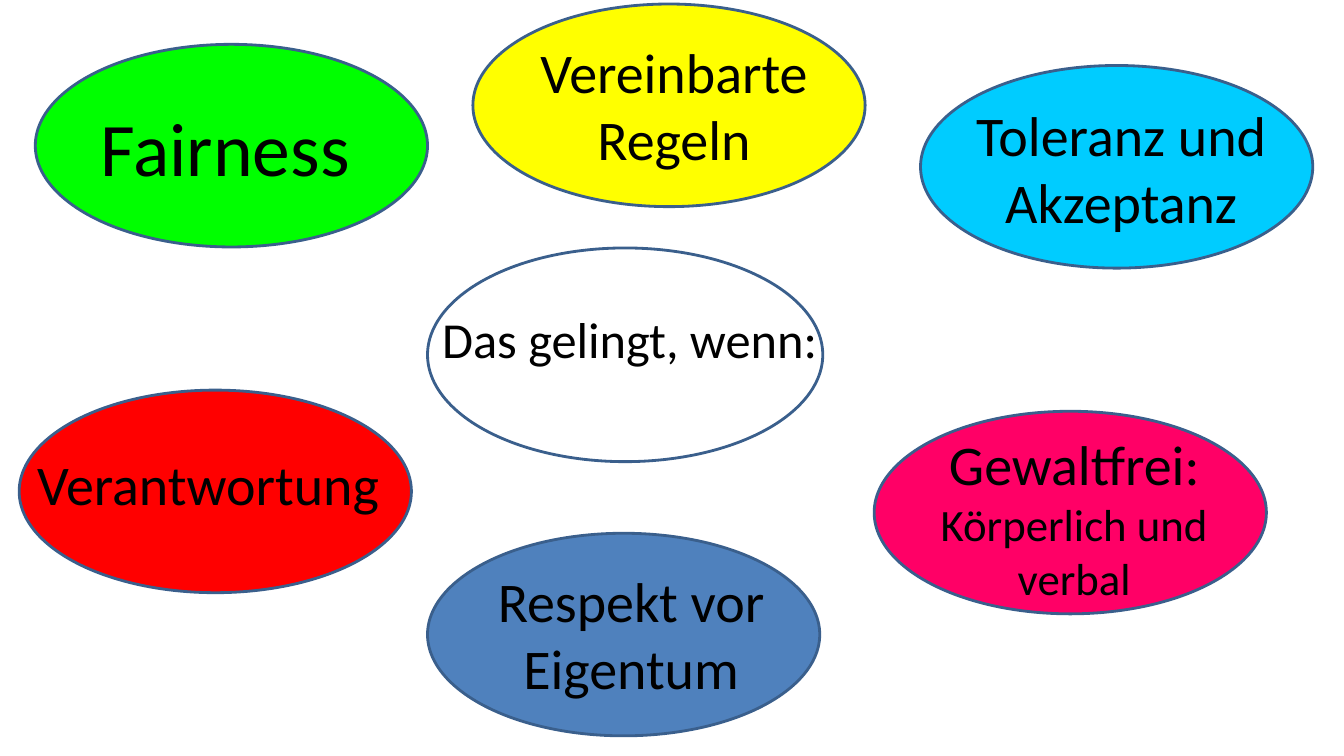
from pptx import Presentation
from pptx.dml.color import RGBColor
from pptx.enum.shapes import MSO_SHAPE
from pptx.enum.text import MSO_AUTO_SIZE, PP_ALIGN
from pptx.util import Inches, Pt

BLACK = RGBColor(0x00, 0x00, 0x00)
EDGE = RGBColor(0x3A, 0x5F, 0x8C)
GREEN = RGBColor(0x00, 0xFF, 0x00)
YELLOW = RGBColor(0xFF, 0xFF, 0x00)
CYAN = RGBColor(0x00, 0xCC, 0xFF)
PINK = RGBColor(0xFF, 0x00, 0x66)
BLUE = RGBColor(0x4F, 0x81, 0xBD)
RED = RGBColor(0xFF, 0x00, 0x00)

LEFT, CENTER = PP_ALIGN.LEFT, PP_ALIGN.CENTER
SIZE = (3.89, 2.01)

# Ellipse box, fill, label box relative to the ellipse, alignment, (text, size) lines
BUBBLES = [
    ((4.24, 2.46, 3.92, 2.12), None, (0, 0.55, 4.01, 0.71), CENTER,
     [("Das gelingt, wenn:", 36)]),
    ((0.35, 0.44, *SIZE), GREEN, (0.55, 0.51, 2.79, 1.01), LEFT,
     [("Fairness", 54)]),
    ((4.69, 0.04, *SIZE), YELLOW, (0.53, 0.28, 2.93, 1.45), CENTER,
     [("Vereinbarte Regeln", 40)]),
    ((9.13, 0.65, *SIZE), CYAN, (0.35, 0.3, 3.28, 1.45), CENTER,
     [("Toleranz und Akzeptanz", 40)]),
    ((8.67, 4.08, *SIZE), PINK, (0.4, 0.13, 3.17, 1.85), CENTER,
     [("Gewaltfrei:", 40), ("Körperlich und verbal", 32)]),
    ((4.24, 5.29, *SIZE), BLUE, (0.39, 0.28, 3.26, 1.45), CENTER,
     [("Respekt vor Eigentum", 40)]),
    ((0.19, 3.87, *SIZE), RED, (0.08, 0.54, 3.7, 0.77), LEFT,
     [("Verantwortung", 40)]),
]


def add_oval(slide, box, color):
    oval = slide.shapes.add_shape(MSO_SHAPE.OVAL, *map(Inches, box))
    oval.shadow.inherit = False
    if color is None:
        oval.fill.background()
    else:
        oval.fill.solid()
        oval.fill.fore_color.rgb = color
    oval.line.color.rgb = EDGE
    oval.line.width = Pt(2)


def add_label(slide, box, align, lines):
    frame = slide.shapes.add_textbox(*map(Inches, box)).text_frame
    frame.word_wrap = True
    frame.auto_size = MSO_AUTO_SIZE.SHAPE_TO_FIT_TEXT
    for i, (text, size) in enumerate(lines):
        para = frame.add_paragraph() if i else frame.paragraphs[0]
        para.alignment = align
        run = para.add_run()
        run.text = text
        for key, value in {"name": "Calibri", "size": Pt(size)}.items():
            setattr(run.font, key, value)
        run.font.color.rgb = BLACK


def add_bubble(slide, box, color, inset, align, lines):
    """Draw an ellipse with its label placed relative to the ellipse's corner."""
    left, top = box[:2]
    dx, dy, width, height = inset
    add_oval(slide, box, color)
    add_label(slide, (left + dx, top + dy, width, height), align, lines)


def main():
    deck = Presentation()
    deck.slide_width, deck.slide_height = Inches(13.33), Inches(7.5)
    slide = deck.slides.add_slide(deck.slide_layouts[6])
    for bubble in BUBBLES:
        add_bubble(slide, *bubble)
    deck.save("out.pptx")


if __name__ == "__main__":
    main()
